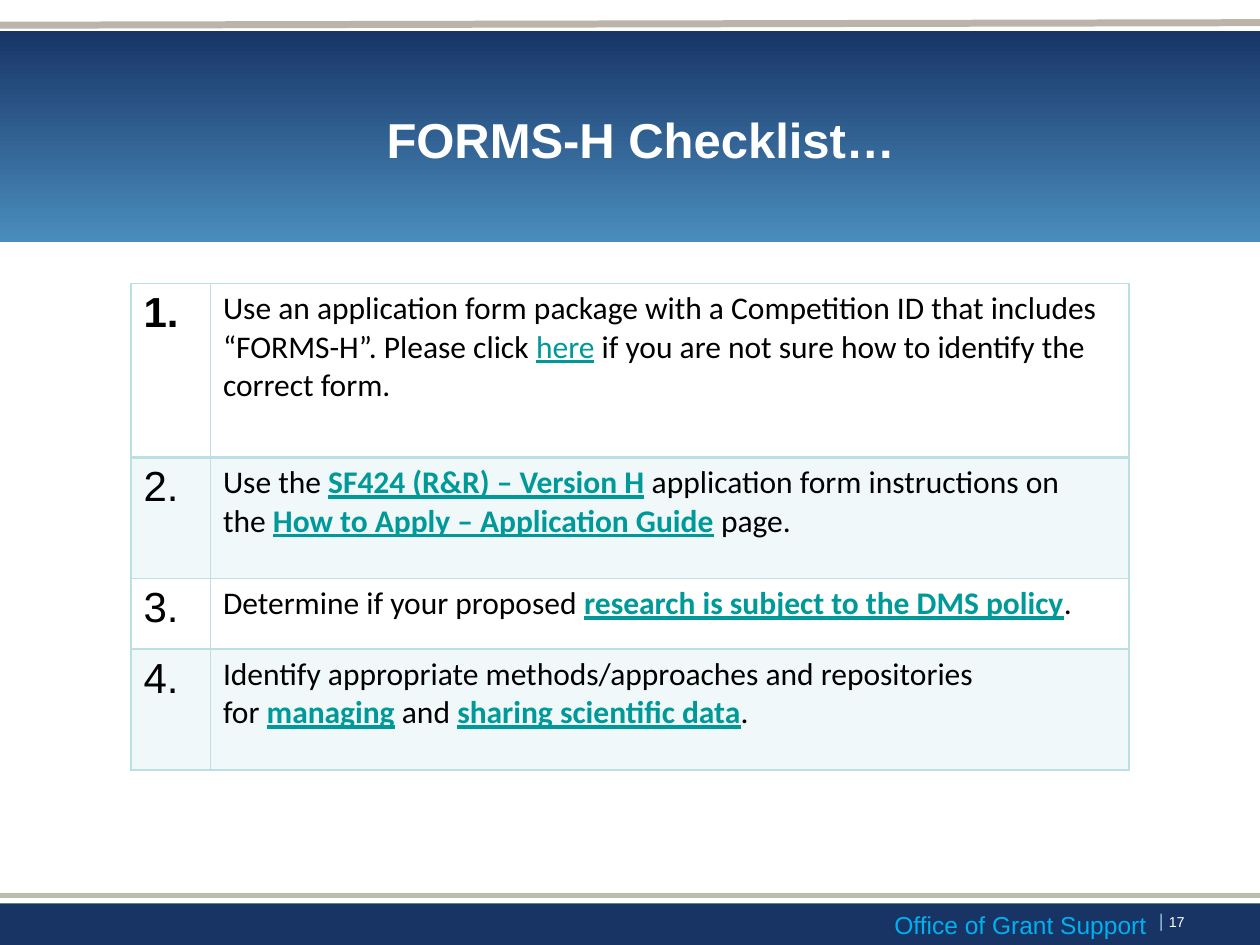
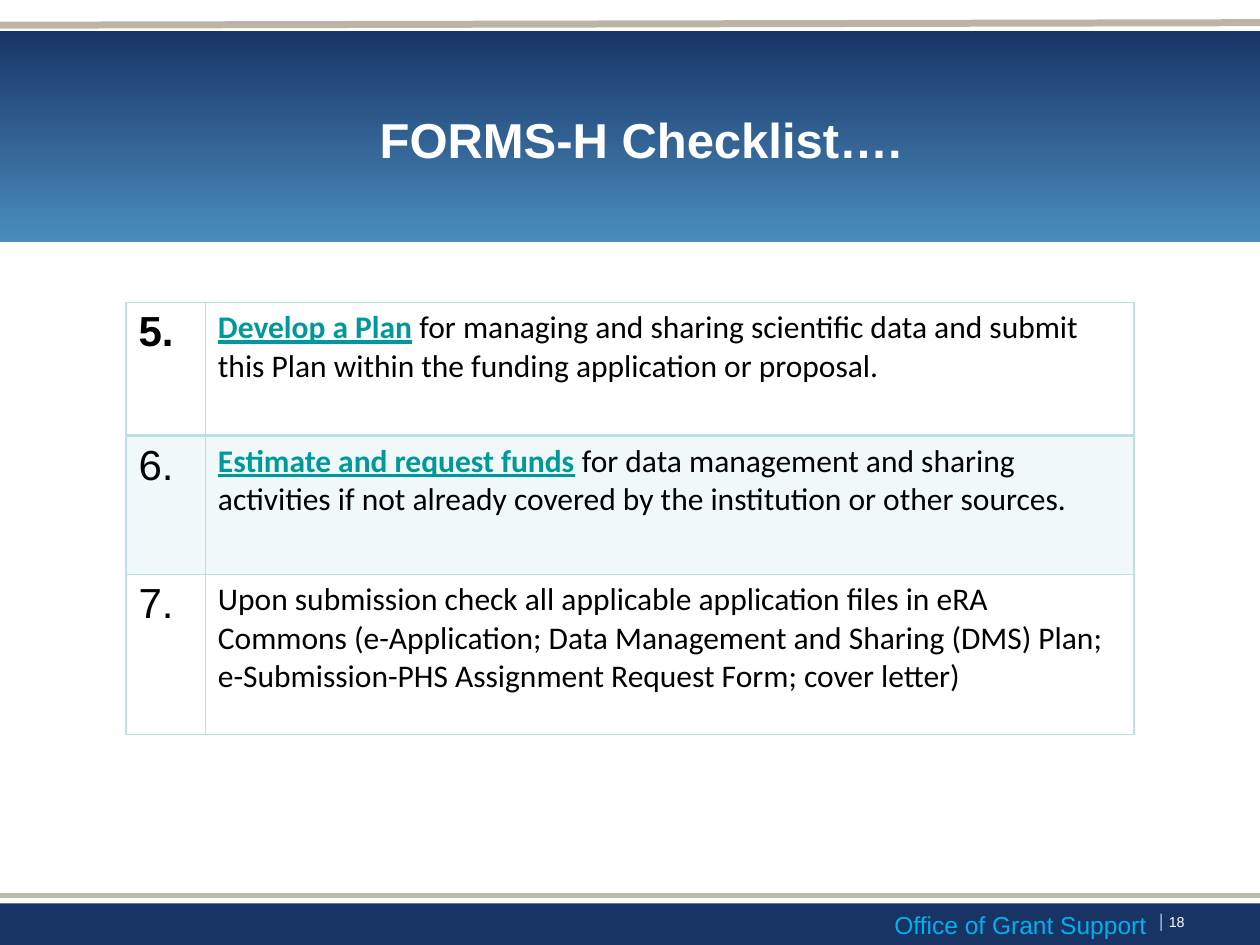
from dataclasses import dataclass

from lxml.etree import SubElement
from pptx import Presentation
from pptx.dml.color import RGBColor as RGB
from pptx.enum.shapes import MSO_CONNECTOR as CONN, MSO_SHAPE as SHAPE
from pptx.enum.text import MSO_ANCHOR as ANCHOR, MSO_AUTO_SIZE as FIT, PP_ALIGN as ALIGN
from pptx.oxml.ns import qn
from pptx.util import Inches, Pt


@dataclass(frozen=True)
class Theme:
    navy: str = "183465"
    band_top: str = "193567"
    band_bottom: str = "498DBD"
    top_rule: str = "BCB3A9"
    bottom_rule: str = "BBBCA9"
    white: str = "FFFFFF"
    black: str = "000000"
    link: str = "009999"
    grid: str = "BBE0E3"
    office: str = "00B0F0"
    divider: str = "8FBEDC"
    head_font: str = "Arial"
    body_font: str = "Calibri"
    title_size: float = 28
    number_size: float = 24
    body_size: float = 18
    office_size: float = 14
    divider_size: float = 10.5
    page_size: float = 8.2


T = Theme()
OFFICE = "Office of Grant Support"
LIGHT_LINKS = {"here"}

# "|" switches link styling on and off; "~" stands for a non-breaking space
CHECKLISTS = [
    dict(title="FORMS-H Checklist…", page=17, first=1, left=1.04, top=2.25,
         cols=[0.63, 7.29], rows=[1.38, 0.96, 0.56, 0.96], items=[
             "Use an application form package with a Competition ID that includes “FORMS-H”. "
             "Please click |here| if you are not sure how to identify the correct form.",
             "Use the~|SF424 (R&R) – Version H|~application form instructions on "
             "the~|How to Apply – Application Guide|~page.",
             "Determine if your proposed~|research is subject to the DMS policy|.",
             "Identify appropriate methods/approaches and repositories "
             "for~|managing|~and~|sharing scientific data|."]),
    dict(title="FORMS-H Checklist….", page=18, first=5, left=1, top=2.4,
         cols=[0.63, 7.37], rows=[1.06, 1.1, 1.27], items=[
             "|Develop a Plan|~for managing and sharing scientific data and submit "
             "this Plan within the funding application or proposal.",
             "|Estimate and request funds|~for data management and sharing activities "
             "if not already covered by the institution or other sources.",
             "Upon submission check all applicable application files in eRA Commons "
             "(e-Application; Data Management and Sharing (DMS) Plan; "
             "e-Submission-PHS Assignment Request Form; cover letter)"]),
]


def style(r, size, color, font=T.head_font, bold=False, underline=False):
    r.font.size, r.font.name = Pt(size), font
    r.font.bold, r.font.underline = bold, underline
    r.font.color.rgb = RGB.from_string(color)


def set_borders(cell, top, bottom):
    pr = cell._tc.get_or_add_tcPr()
    for i, (tag, width) in enumerate([("lnL", 1), ("lnR", 1), ("lnT", top), ("lnB", bottom)]):
        ln = SubElement(pr, qn(f"a:{tag}"), w=str(Pt(width)))
        SubElement(SubElement(ln, qn("a:solidFill")), qn("a:srgbClr"), val=T.grid)
        pr.insert(i, ln)


prs = Presentation()
prs.slide_width, prs.slide_height = Inches(10), Inches(7.5)
layout = prs.slide_layouts[5]
slides = [prs.slides.add_slide(layout) for _ in CHECKLISTS]

shared = []
shapes = slides[0].shapes
for y, h in [(7.17, 0.33), (0.25, 1.67)]:
    sp = shapes.add_shape(SHAPE.RECTANGLE, 0, Inches(y), Inches(10), Inches(h))
    sp.shadow.inherit = False
    sp.line.fill.background()
    shared.append(sp)
footer, band = shared
footer.fill.solid()
footer.fill.fore_color.rgb = RGB.from_string(T.navy)
band.fill.gradient()
band.fill.gradient_angle = 270
for stop, pos, color in zip(band.fill.gradient_stops, (0, 1), (T.band_top, T.band_bottom)):
    stop.position = pos
    stop.color.rgb = RGB.from_string(color)
for y1, y2, color, width in [(7.11, 7.11, T.bottom_rule, 3), (0.2, 0.18, T.top_rule, 4)]:
    rule = shapes.add_connector(CONN.STRAIGHT, 0, Inches(y1), Inches(10), Inches(y2))
    rule.line.color.rgb = RGB.from_string(color)
    rule.line.width = Pt(width)
    SubElement(rule.element.spPr, qn("a:effectLst"))
    shared.append(rule)
for i, sp in enumerate(shared):
    sp.element.xpath(".//p:cNvPr")[0].set("id", str(20 + i))
    layout.shapes.element.insert(2 + i, sp.element)

for s, data in zip(slides, CHECKLISTS):
    title = s.shapes.title
    title.left, title.top = Inches(0.75), Inches(0.54)
    title.width, title.height = Inches(8.67), Inches(1.12)
    tf = title.text_frame
    tf.text = data["title"]
    tf.auto_size, tf.vertical_anchor = FIT.NONE, ANCHOR.MIDDLE
    tf.paragraphs[0].alignment = ALIGN.CENTER
    style(tf.paragraphs[0].runs[0], T.title_size, T.white, bold=True)

    tf = s.shapes.add_textbox(Inches(8.75), Inches(7.17), Inches(0.75), Inches(0.33)).text_frame
    tf.word_wrap = True
    p = tf.paragraphs[0]
    p.alignment = ALIGN.RIGHT
    for text, size, color in [("| ", T.divider_size, T.divider),
                              (str(data["page"]), T.page_size, T.white)]:
        r = p.add_run()
        r.text = text
        style(r, size, color)

    tf = s.shapes.add_textbox(Inches(7), Inches(7.17), Inches(2.21), Inches(0.34)).text_frame
    tf.word_wrap, tf.auto_size = False, FIT.SHAPE_TO_FIT_TEXT
    tf.text = OFFICE
    style(tf.paragraphs[0].runs[0], T.office_size, T.office)

    cols, rows = data["cols"], data["rows"]
    table = s.shapes.add_table(len(rows), len(cols), Inches(data["left"]), Inches(data["top"]),
                               Inches(sum(cols)), Inches(sum(rows))).table
    table.first_row = table.horz_banding = False
    for col, width in zip(table.columns, cols):
        col.width = Inches(width)
    for i, (row, height, item) in enumerate(zip(table.rows, rows, data["items"])):
        row.height = Inches(height)
        number, step = row.cells
        number.text_frame.text = f"{data['first'] + i}."
        style(number.text_frame.paragraphs[0].runs[0], T.number_size, T.black, bold=i == 0)
        p = step.text_frame.paragraphs[0]
        for j, text in enumerate(item.replace("~", chr(160)).split("|")):
            if text:
                linked = j % 2 == 1
                r = p.add_run()
                r.text = text
                style(r, T.body_size, T.link if linked else T.black, T.body_font,
                      bold=linked and text not in LIGHT_LINKS, underline=linked)
        for cell in (number, step):
            if i % 2:
                cell.fill.solid()
                cell.fill.fore_color.rgb = RGB.from_string(T.grid)
                tint = cell._tc.tcPr.find(f".//{qn('a:srgbClr')}")
                SubElement(tint, qn("a:alpha"), val="20000")
            else:
                cell.fill.background()
            set_borders(cell, top=2 if i == 1 else 1, bottom=2 if i == 0 else 1)

prs.save("out.pptx")
